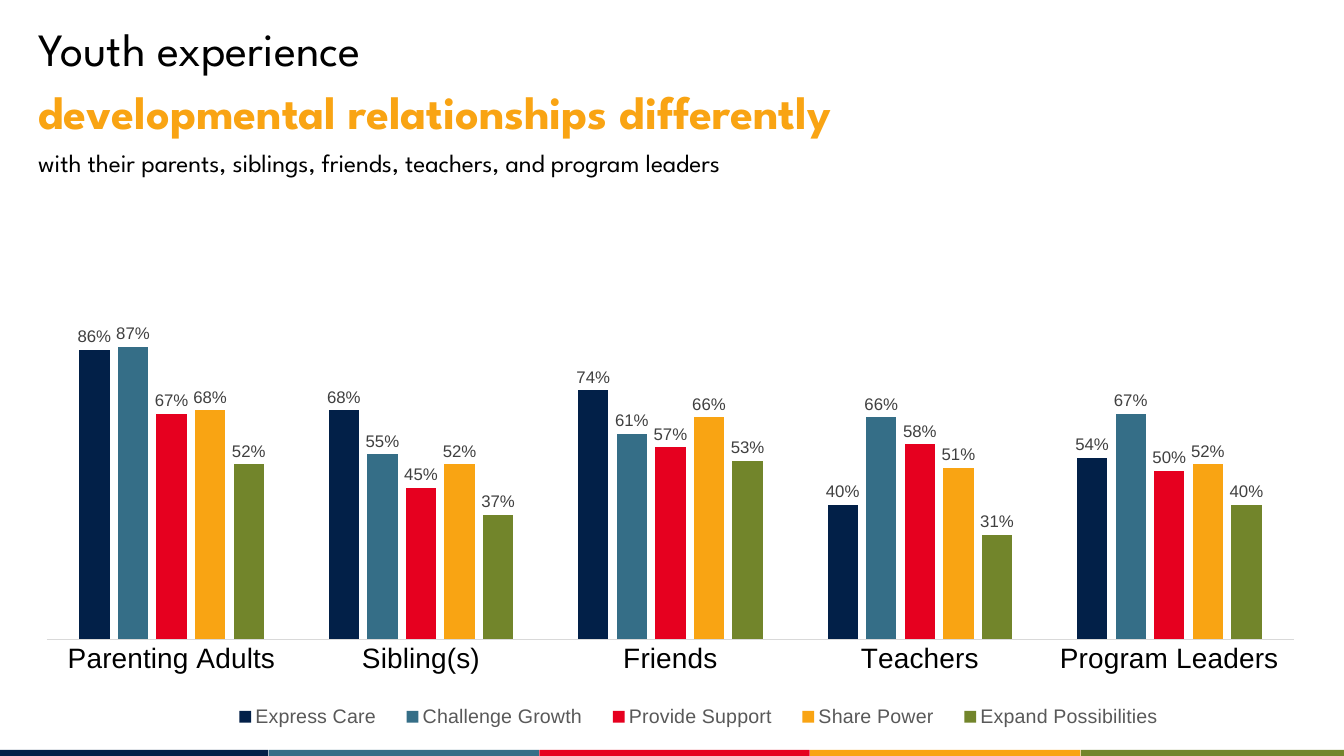
from lxml.etree import SubElement
from pptx import Presentation
from pptx.chart.data import CategoryChartData
from pptx.dml.color import RGBColor
from pptx.enum.chart import XL_CHART_TYPE, XL_LABEL_POSITION, XL_LEGEND_POSITION, XL_TICK_MARK
from pptx.enum.shapes import MSO_SHAPE
from pptx.enum.text import MSO_ANCHOR
from pptx.oxml.ns import qn
from pptx.util import Inches, Pt

CATEGORIES = ["Parenting Adults", "Sibling(s)", "Friends", "Teachers", "Program Leaders"]
SERIES = [
    ("Express Care", "022048", (0.86, 0.68, 0.74, 0.40, 0.54)),
    ("Challenge Growth", "356E87", (0.87, 0.55, 0.61, 0.66, 0.67)),
    ("Provide Support", "E6001F", (0.67, 0.45, 0.57, 0.58, 0.50)),
    ("Share Power", "F9A413", (0.68, 0.52, 0.66, 0.51, 0.52)),
    ("Expand Possibilities", "72852B", (0.52, 0.37, 0.53, 0.31, 0.40)),
]


def color(value):
    return RGBColor.from_string(value)


def style_font(font, size, fill="000000", name="Arial", bold=False):
    font.name, font.size, font.bold = name, Pt(size), bold
    font.color.rgb = color(fill)


def add_text(p, text, **fmt):
    r = p.add_run()
    r.text = text
    style_font(r.font, **fmt)


def set_layout(parent, index, x, y, w, h, inner=False):
    """Place a chart part by fractions of the chart's size."""
    for old in parent.findall(qn("c:layout")):
        parent.remove(old)
    layout = SubElement(parent, qn("c:layout"))
    parent.insert(index, layout)
    manual = SubElement(layout, qn("c:manualLayout"))
    settings = [("layoutTarget", "inner")] if inner else []
    settings += [("xMode", "edge"), ("yMode", "edge"), ("x", x), ("y", y), ("w", w), ("h", h)]
    for tag, value in settings:
        SubElement(manual, qn("c:" + tag)).set("val", str(value))


class SlideBuilder:
    title_font = "League Spartan"

    def __init__(self, prs):
        self.s = prs.slides.add_slide(prs.slide_layouts[6])

    def bar(self, x, y, w, h, fill):
        sp = self.s.shapes.add_shape(MSO_SHAPE.RECTANGLE, Inches(x), Inches(y), Inches(w), Inches(h))
        sp.shadow.inherit = False
        sp.fill.solid()
        sp.fill.fore_color.rgb = color(fill)
        sp.line.fill.background()

    def heading(self, x, y, w, h, lines):
        tf = self.s.shapes.add_textbox(Inches(x), Inches(y), Inches(w), Inches(h)).text_frame
        tf.word_wrap = True
        tf.vertical_anchor = MSO_ANCHOR.MIDDLE
        for i, (text, fmt) in enumerate(lines):
            p = tf.add_paragraph() if i else tf.paragraphs[0]
            p.space_after = Pt(6)
            add_text(p, text, name=self.title_font, **fmt)

    def column_chart(self, x, y, w, h):
        data = CategoryChartData(number_format="0%")
        data.categories = CATEGORIES
        for name, _, values in SERIES:
            data.add_series(name, values)
        chart = self.s.shapes.add_chart(
            XL_CHART_TYPE.COLUMN_CLUSTERED, Inches(x), Inches(y), Inches(w), Inches(h), data).chart
        style_font(chart.font, 10, name="Calibri")
        chart.has_title = False

        # Axes
        axis = chart.category_axis
        axis.major_tick_mark = axis.minor_tick_mark = XL_TICK_MARK.NONE
        axis.format.line.color.rgb = color("D9D9D9")
        axis.format.line.width = Pt(0.75)
        style_font(axis.tick_labels.font, 20)
        axis = chart.value_axis
        axis.visible = axis.has_major_gridlines = False
        axis.minimum_scale, axis.maximum_scale = 0, 1

        # Columns and their labels
        plot = chart.plots[0]
        plot.gap_width, plot.overlap = 213, -27
        plot.vary_by_categories = False
        for series, (_, fill, _) in zip(plot.series, SERIES):
            series.format.fill.solid()
            series.format.fill.fore_color.rgb = color(fill)
            labels = series.data_labels
            labels.show_value = True
            labels.position = XL_LABEL_POSITION.OUTSIDE_END
            labels.number_format, labels.number_format_is_linked = "0%", False
            style_font(labels.font, 12, "404040")

        # Legend and placement
        chart.has_legend = True
        chart.legend.position = XL_LEGEND_POSITION.BOTTOM
        chart.legend.include_in_layout = False
        style_font(chart.legend.font, 14, "595959")
        root = plot._element.getparent().getparent()
        set_layout(root.find(qn("c:plotArea")), 0, 0, 0.132, 1, 0.608, inner=True)
        set_layout(root.find(qn("c:legend")), 1, 0.135, 0.845, 0.775, 0.07)


def main():
    prs = Presentation()
    prs.slide_width, prs.slide_height = Inches(13.33), Inches(7.5)
    slide = SlideBuilder(prs)

    # Footer stripe in the series colours
    for i, (_, fill, _) in enumerate(SERIES):
        slide.bar(-0.02 + i * 2.685, 7.44, 2.68, 0.1, fill)

    slide.column_chart(0.46, 2.28, 12.38, 5.49)

    slide.heading(0.28, 0.14, 12.56, 1.68, [
        ("Youth experience", dict(size=33)),
        ("developmental relationships differently", dict(size=33, fill="F9A413", bold=True)),
        ("with their parents, siblings, friends, teachers, and program leaders", dict(size=18)),
    ])
    prs.save("out.pptx")


if __name__ == "__main__":
    main()
